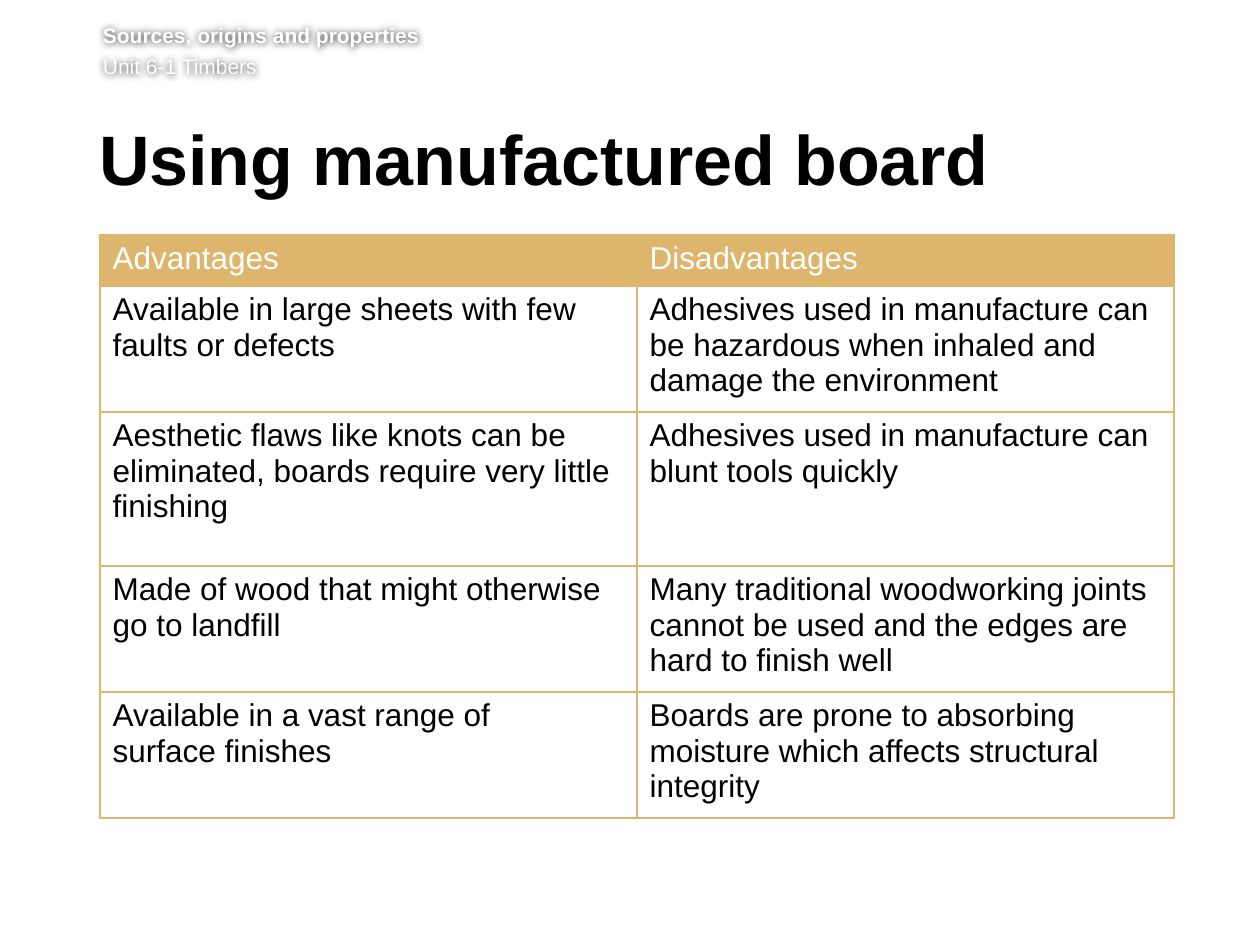
from lxml import etree
from pptx import Presentation
from pptx import util as u
from pptx.dml.color import RGBColor
from pptx.enum import text
from pptx.oxml import ns

PX_PER_INCH = 126
FONT = "Arial"
GOLD, WHITE, BLACK = "DDB56D", "FFFFFF", "000000"
ROW_HEIGHTS = [51, 118, 154, 118, 119]
ROWS = [
    ("Advantages", "Disadvantages"),
    ("Available in large sheets with few faults or defects",
     "Adhesives used in manufacture can be hazardous when inhaled and "
     "damage the environment"),
    ("Aesthetic flaws like knots can be eliminated, boards require very "
     "little finishing",
     "Adhesives used in manufacture can blunt tools quickly"),
    ("Made of wood that might otherwise go to landfill",
     "Many traditional woodworking joints cannot be used and the edges are "
     "hard to finish well"),
    ("Available in a vast range of\vsurface finishes",
     "Boards are prone to absorbing moisture which affects structural "
     "integrity"),
]


def px(n):
    return u.Emu(round(n * 914400 / PX_PER_INCH))


def color(value):
    return RGBColor.from_string(value)


def style(p, size, hex_color, bold=False):
    for r in p.runs:
        r.font.name = FONT
        r.font.size = u.Pt(size)
        r.font.bold = bold
        r.font.color.rgb = color(hex_color)


def sub(parent, tag, **attrs):
    return etree.SubElement(parent, ns.qn(tag), **attrs)


def add_halo(sp):
    """Put a soft dark shadow directly behind the text of a box."""
    effects = sub(sp._element.spPr, "a:effectLst")
    shadow = sub(effects, "a:outerShdw", blurRad="50800", dist="0", dir="0",
                 algn="ctr", rotWithShape="0")
    sub(sub(shadow, "a:srgbClr", val=BLACK), "a:alpha", val="80000")


def add_unit_header(s):
    sp = s.shapes.add_textbox(px(103), px(23), px(1111), px(60))
    tf = sp.text_frame
    tf.word_wrap = True
    tf.margin_left = tf.margin_top = tf.margin_right = 0
    tf.text = "Sources, origins and properties\nUnit 6-1 Timbers"
    heading, unit = tf.paragraphs
    style(heading, 12, WHITE, bold=True)
    style(unit, 12, WHITE)
    unit.space_before = u.Pt(2.9)
    add_halo(sp)


def set_title(s):
    sp = s.shapes.title
    sp.left, sp.top, sp.width, sp.height = px(99), px(125), px(1077), px(92)
    tf = sp.text_frame
    tf.text = "Using manufactured board"
    tf.margin_left = 0
    tf.vertical_anchor = text.MSO_ANCHOR.TOP
    tf.auto_size = text.MSO_AUTO_SIZE.NONE
    p = tf.paragraphs[0]
    p.alignment = text.PP_ALIGN.LEFT
    p.line_spacing = u.Pt(39)
    style(p, 40, BLACK, bold=True)


def set_borders(cell, hex_color):
    tc_pr = cell._tc.get_or_add_tcPr()
    for i, side in enumerate(("a:lnL", "a:lnR", "a:lnT", "a:lnB")):
        ln = etree.Element(ns.qn(side), w=str(u.Pt(1)))
        sub(sub(ln, "a:solidFill"), "a:srgbClr", val=hex_color)
        tc_pr.insert(i, ln)


def add_comparison_table(s):
    frame = s.shapes.add_table(len(ROWS), 2, px(100), px(235), px(1074),
                               px(sum(ROW_HEIGHTS)))
    table = frame.table
    table.horz_banding = False
    for i, (row, height) in enumerate(zip(ROWS, ROW_HEIGHTS)):
        table.rows[i].height = px(height)
        for j, content in enumerate(row):
            cell = table.cell(i, j)
            cell.text = content
            style(cell.text_frame.paragraphs[0], 18, BLACK if i else WHITE)
            if i:
                cell.fill.background()
            else:
                cell.fill.solid()
                cell.fill.fore_color.rgb = color(GOLD)
            set_borders(cell, GOLD)


def main():
    prs = Presentation()
    prs.slide_width, prs.slide_height = u.Inches(10), u.Inches(7.5)
    s = prs.slides.add_slide(prs.slide_layouts[5])
    add_unit_header(s)
    set_title(s)
    add_comparison_table(s)
    prs.save("out.pptx")


if __name__ == "__main__":
    main()
